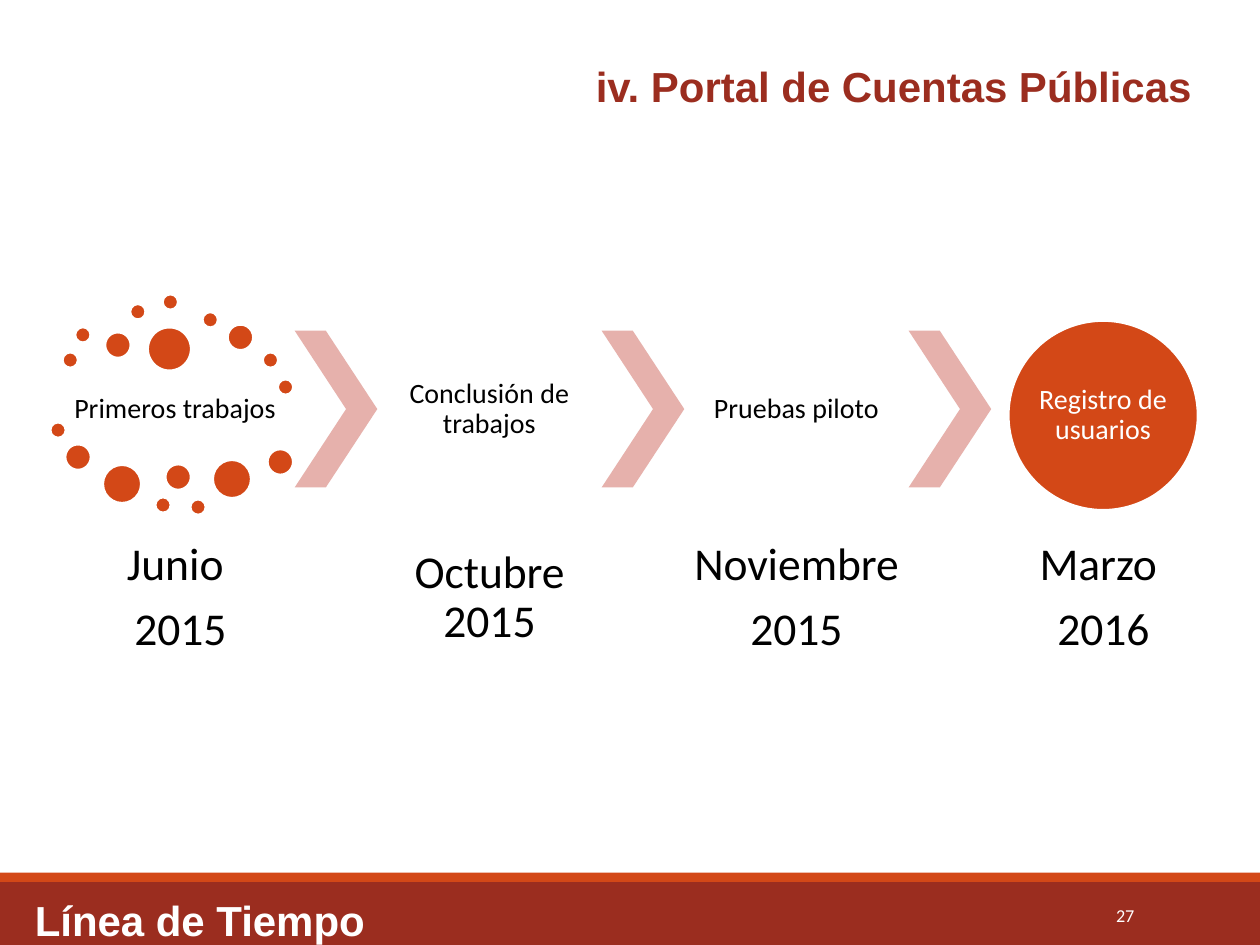
from pptx import Presentation
from pptx.dml.color import RGBColor
from pptx.enum.shapes import MSO_SHAPE
from pptx.enum.text import MSO_ANCHOR, PP_ALIGN
from pptx.util import Pt

BRICK = RGBColor(0x9B, 0x2D, 0x1F)
ORANGE = RGBColor(0xD3, 0x48, 0x17)
PINK = RGBColor(0xE6, 0xB1, 0xAC)
BLACK = RGBColor(0, 0, 0)
WHITE = RGBColor(255, 255, 255)

TITLE = "iv. Portal de Cuentas Públicas"
SECTION = "Línea de Tiempo"
PAGE_NUMBER = "27"
STEPS = [
    ("Primeros trabajos", ["Junio", " 2015"]),
    ("Conclusión de trabajos", ["Octubre 2015"]),
    ("Pruebas piloto", ["Noviembre", "2015"]),
    ("Registro de usuarios", ["Marzo ", "2016"]),
]
# Dot diameter: centres of the dots around the first step
DOTS = {
    5.04: [(20.1, 102.9), (23.7, 95.7), (39.4, 89.1), (48.7, 86.3), (60.1, 91.4),
           (77.3, 102.9), (81.6, 110.6), (16.6, 122.9), (46.6, 144.3), (56.6, 144.9)],
    7.92: [(33.7, 98.6), (68.7, 96.4), (22.3, 130.6), (50.9, 136.3), (80.1, 132)],
    11.52: [(34.9, 138.3), (66.3, 136.9)],
    12.96: [(48.4, 99.7)],
}

SLIDE_W, SLIDE_H = 360, 270
FIRST_LEFT = 18
STEP_W = 64.1
CHEVRON_LEFT, CHEVRON_W, CHEVRON_H = 84.2, 23.6, 44.8
PITCH = STEP_W + CHEVRON_W
STEP_TOP = 94.5
DATE_TOP, DATE_H = 151.2, 39.6
CIRCLE_CENTER, CIRCLE_SIZE, CIRCLE_TEXT_SIZE = (315.2, 118.7), 54.7, 38.9

deck = Presentation()
deck.slide_width, deck.slide_height = Pt(SLIDE_W), Pt(SLIDE_H)
page = deck.slides.add_slide(deck.slide_layouts[6])


def add_shape(kind, left, top, width, height, fill, outlined=False):
    shape = page.shapes.add_shape(kind, Pt(left), Pt(top), Pt(width), Pt(height))
    shape.shadow.inherit = False
    shape.fill.solid()
    shape.fill.fore_color.rgb = fill
    if outlined:
        shape.line.color.rgb = WHITE
        shape.line.width = Pt(1.25)
    else:
        shape.line.fill.background()
    return shape


def add_circle(center, size):
    x, y = center
    add_shape(MSO_SHAPE.OVAL, x - size / 2, y - size / 2, size, size, ORANGE, True)


def add_text(lines, left, top, width, height, size, color, font="Calibri", bold=False,
             align=PP_ALIGN.LEFT, anchor=MSO_ANCHOR.TOP):
    box = page.shapes.add_textbox(Pt(left), Pt(top), Pt(width), Pt(height))
    frame = box.text_frame
    frame.word_wrap = True
    frame.vertical_anchor = anchor
    frame.text = "\n".join(lines)
    for para in frame.paragraphs:
        para.alignment = align
        para.font.name, para.font.size, para.font.bold = font, Pt(size), bold
        para.font.color.rgb = color
    return frame


def add_step_text(lines, left, top, width, height, size, inset, color=BLACK):
    frame = add_text(lines, left, top, width, height, size, color,
                     align=PP_ALIGN.CENTER, anchor=MSO_ANCHOR.MIDDLE)
    frame.margin_left = frame.margin_right = Pt(inset)
    frame.margin_top = frame.margin_bottom = Pt(inset)
    for para in frame.paragraphs:
        para.line_spacing = 0.9
        para.space_after = Pt(0.35 * size)


add_shape(MSO_SHAPE.RECTANGLE, 0, 252, SLIDE_W, 18, BRICK)
add_shape(MSO_SHAPE.RECTANGLE, 0, 249.3, SLIDE_W, 2.7, ORANGE)
add_text([TITLE], 41.8, 13.7, 306, 21.6, 12, BRICK, "Arial", True, PP_ALIGN.RIGHT)

for diameter, centers in DOTS.items():
    for center in centers:
        add_circle(center, diameter)
add_circle(CIRCLE_CENTER, CIRCLE_SIZE)

for index, (label, date) in enumerate(STEPS):
    left = FIRST_LEFT
    if index > 0:
        chevron_left = CHEVRON_LEFT + (index - 1) * PITCH
        left = chevron_left + CHEVRON_W
        chevron = add_shape(MSO_SHAPE.CHEVRON, chevron_left, STEP_TOP,
                            CHEVRON_W, CHEVRON_H, PINK)
        chevron.adjustments[0] = 0.623
    if index < len(STEPS) - 1:
        add_step_text([label], left, STEP_TOP, STEP_W, CHEVRON_H, 8, 0.7)
    else:
        x, y = (middle - CIRCLE_TEXT_SIZE / 2 for middle in CIRCLE_CENTER)
        add_step_text([label], x, y, CIRCLE_TEXT_SIZE, CIRCLE_TEXT_SIZE, 8, 0, WHITE)
    add_step_text(date, left, DATE_TOP, STEP_W, DATE_H, 13, 1.4)

add_text([PAGE_NUMBER], 292.3, 254.2, 38.9, 14.4, 5.2, WHITE,
         align=PP_ALIGN.RIGHT, anchor=MSO_ANCHOR.MIDDLE)
add_text([SECTION], 2.9, 252, 189.4, 21.6, 12, WHITE, "Arial", True)

deck.save("out.pptx")
